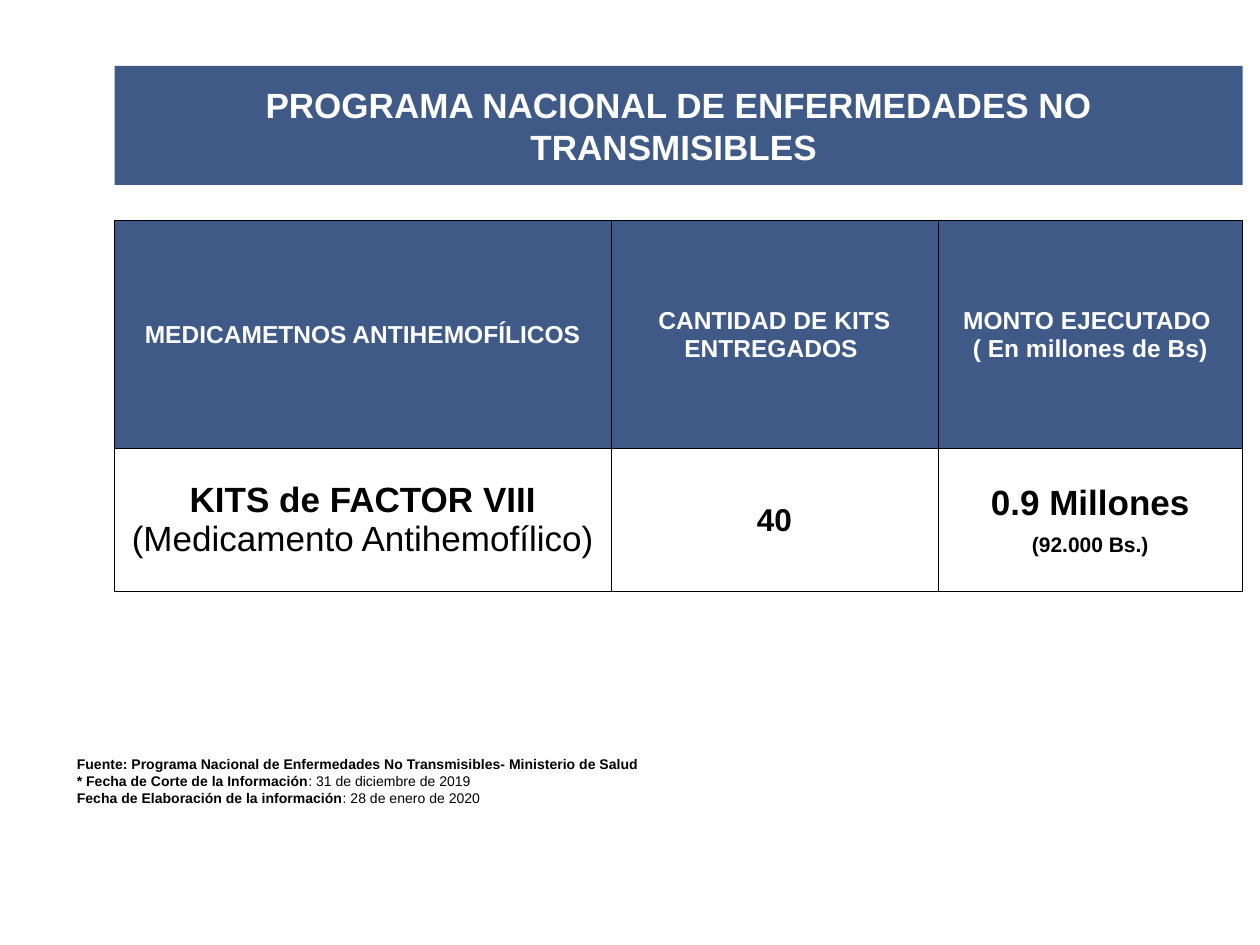
import pptx
import pptx.dml.color
import pptx.enum.shapes
import pptx.enum.text
import pptx.oxml
import pptx.oxml.ns
import pptx.util
from pptx.util import Cm

HUES = {"blue": "3F5A87", "white": "FFFFFF", "black": "000000"}
MID = pptx.enum.text.MSO_ANCHOR.MIDDLE
LEFT = pptx.enum.text.PP_ALIGN.LEFT
CENTER = pptx.enum.text.PP_ALIGN.CENTER


def color(name):
    """Return the named colour."""
    return pptx.dml.color.RGBColor.from_string(HUES[name])


def paint(fill, name):
    """Make a fill solid in the named colour."""
    fill.solid()
    fill.fore_color.rgb = color(name)


def write(frame, lines, hue, align=CENTER, gap=0):
    """Write lines of (size, runs), each run being (text, bold)."""
    frame.word_wrap = True
    for i, (size, runs) in enumerate(lines):
        para = frame.add_paragraph() if i else frame.paragraphs[0]
        para.alignment = align
        para.space_before = pptx.util.Pt(gap)
        font = para.font
        font.name, font.size = "Arial", pptx.util.Pt(size)
        font.color.rgb = color(hue)
        font.bold = runs[0][1]
        for text, bold in runs:
            run = para.add_run()
            run.text = text
            if bold != font.bold:
                run.font.bold = bold


def border(cell):
    """Give a cell thin black lines on all four sides."""
    props = cell._tc.get_or_add_tcPr()
    for i, side in enumerate(("lnL", "lnR", "lnT", "lnB")):
        props.insert(i, pptx.oxml.parse_xml(
            f'<a:{side} {pptx.oxml.ns.nsdecls("a")} w="6350"><a:solidFill>'
            f'<a:srgbClr val="{HUES["black"]}"/></a:solidFill></a:{side}>'))


def banner(slide, box):
    """Place the title bar."""
    bar = slide.shapes.add_shape(pptx.enum.shapes.MSO_SHAPE.RECTANGLE, *box)
    bar.shadow.inherit = False
    bar.line.fill.background()
    paint(bar.fill, "blue")
    bar.text_frame.vertical_anchor = MID
    title = "PROGRAMA NACIONAL DE ENFERMEDADES NO TRANSMISIBLES "
    write(bar.text_frame, [(20, [(title, True)])], "white")


def grid(slide, box):
    """Place the table of kits and amounts."""
    head = [
        [(14, [("MEDICAMETNOS ANTIHEMOFÍLICOS", True)])],
        [(14, [("CANTIDAD DE KITS ENTREGADOS ", True)])],
        [(14, [("MONTO EJECUTADO ", True)]),
         (14, [("( En millones de Bs)", True)])],
    ]
    body = [
        [(20, [("KITS de FACTOR VIII ", True),
               ("(Medicamento Antihemofílico)", False)])],
        [(18, [("40", True)])],
        [(20, [("0.9 Millones", True)]), (12, [("(92.000 Bs.)", True)])],
    ]
    table = slide.shapes.add_table(2, 3, *box).table
    table.first_row = table.horz_banding = False
    for col, part in zip(table.columns, (0.44, 0.29, 0.27)):
        col.width = int(box[2] * part)
    for row, high in zip(table.rows, (4.6, 2.87)):
        row.height = Cm(high)
    looks = ((head, "blue", "white"), (body, "white", "black"))
    for r, (cells, back, ink) in enumerate(looks):
        for c, lines in enumerate(cells):
            cell = table.cell(r, c)
            cell.margin_left = cell.margin_right = Cm(0.02)
            cell.margin_top = cell.margin_bottom = 0
            cell.vertical_anchor = MID
            paint(cell.fill, back)
            border(cell)
            write(cell.text_frame, lines, ink, gap=5.9 if r and c else 0)


def source(slide, box):
    """Place the source and date notes."""
    lines = [
        (8, [("Fuente: Programa Nacional de Enfermedades No Transmisibles- "
              "Ministerio de Salud", True)]),
        (8, [("* Fecha de Corte de la Información", True),
             (": 31 de diciembre de 2019", False)]),
        (8, [("Fecha de Elaboración de la información", True),
             (": 28 de enero de 2020", False)]),
    ]
    frame = slide.shapes.add_textbox(*box).text_frame
    frame.auto_size = pptx.enum.text.MSO_AUTO_SIZE.SHAPE_TO_FIT_TEXT
    write(frame, lines, "black", LEFT)


def main():
    """Build and save the slide."""
    deck = pptx.Presentation()
    deck.slide_width, deck.slide_height = Cm(25.4), Cm(19.05)
    slide = deck.slides.add_slide(deck.slide_layouts[6])
    left, wide = Cm(2.31), Cm(22.74)
    banner(slide, (left, Cm(1.33), wide, Cm(2.4)))
    grid(slide, (left, Cm(4.45), wide, Cm(7.47)))
    source(slide, (Cm(1.3), Cm(15.11), wide, Cm(1.28)))
    deck.save("out.pptx")


if __name__ == "__main__":
    main()
